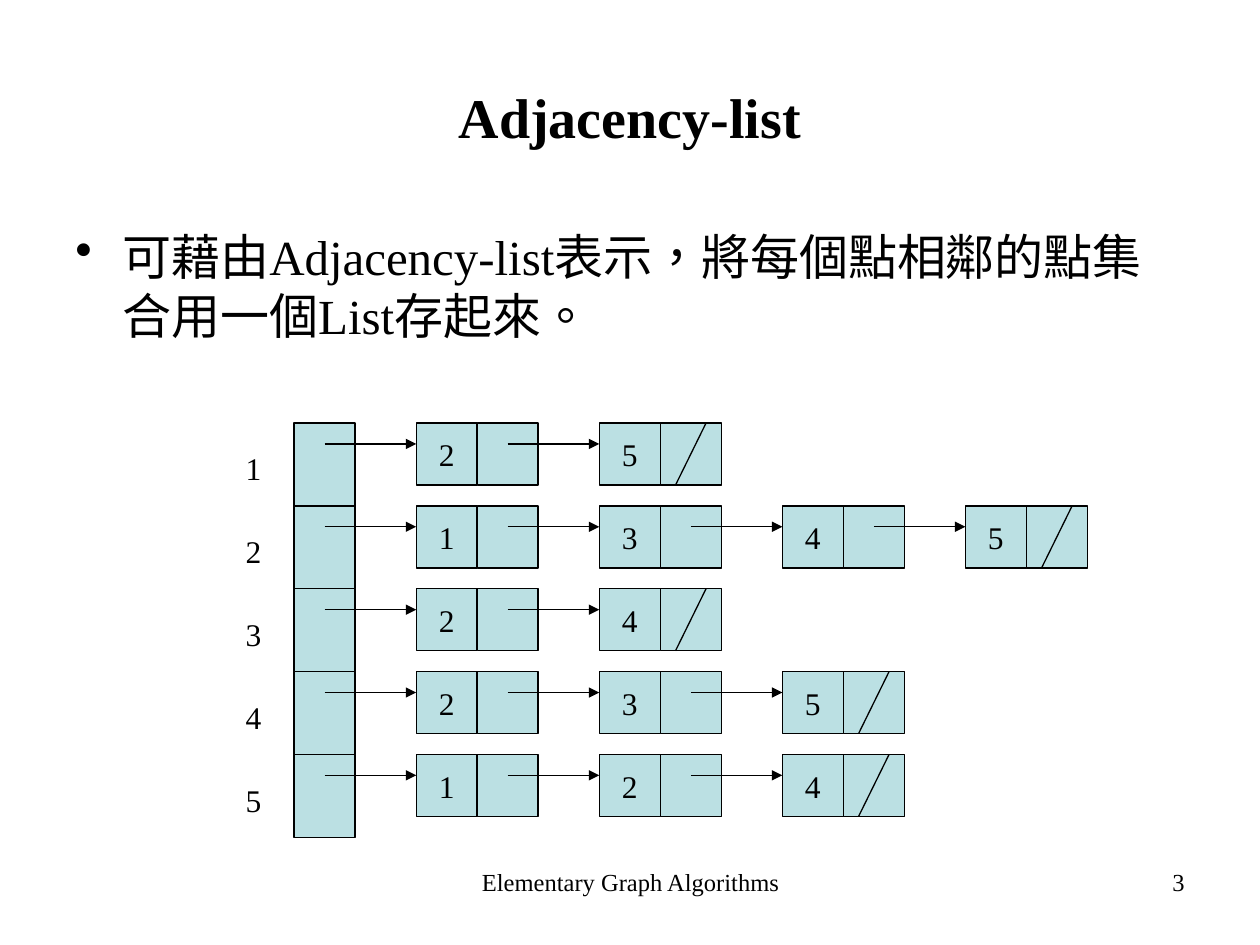
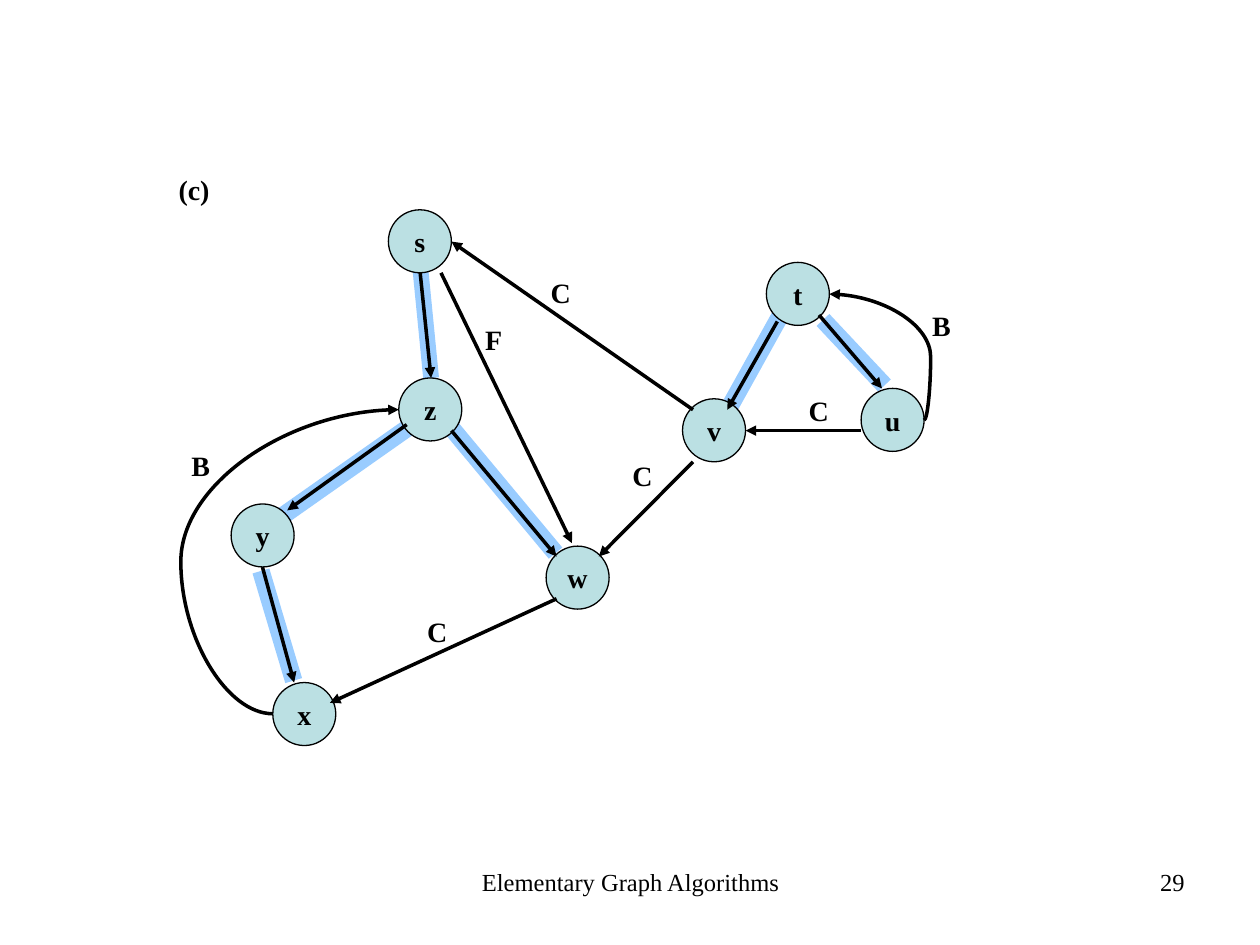
from lxml import etree
from pptx import Presentation
from pptx.dml.color import RGBColor
from pptx.enum.shapes import MSO_CONNECTOR as Connector, MSO_SHAPE as Shape
from pptx.enum.text import MSO_ANCHOR as Anchor, PP_ALIGN as Align
from pptx.oxml.ns import qn
from pptx.util import Cm, Pt

BLACK = RGBColor(0x00, 0x00, 0x00)
PALE_TEAL = RGBColor(0xBB, 0xE0, 0xE3)
TREE_BLUE = RGBColor(0x99, 0xCC, 0xFF)
FONT = "Times New Roman"
TITLE_ONLY, BLANK = 5, 6


class Deck:
    """Holds the shared style and the current slide; lengths are in centimetres."""

    def __init__(self):
        self.presentation = Presentation()
        self.presentation.slide_width = Cm(25.4)
        self.presentation.slide_height = Cm(19.05)
        self.slide = None

    def new_slide(self, number, title=None):
        layout = self.presentation.slide_layouts[TITLE_ONLY if title else BLANK]
        self.slide = self.presentation.slides.add_slide(layout)
        self.text("Elementary Graph Algorithms", 8.69, 17.35, 8.05, 1.32,
                  size=14, align=Align.CENTER)
        self.text(str(number), 18.21, 17.35, 5.92, 1.32, size=14, align=Align.RIGHT)
        if title:
            self.title(title)

    def title(self, text):
        shape = self.slide.shapes.title
        shape.left, shape.top = Cm(1.27), Cm(0.76)
        shape.width, shape.height = Cm(22.86), Cm(3.18)
        shape.text_frame.vertical_anchor = Anchor.MIDDLE
        self.style_text(shape, text, 32, True, Align.CENTER)

    def style_text(self, shape, text, size, bold=False, align=Align.LEFT):
        """Set the shape's text in the shared font and return its paragraph."""
        shape.text_frame.text = text
        paragraph = shape.text_frame.paragraphs[0]
        paragraph.alignment = align
        for run in paragraph.runs:
            run.font.name = FONT
            run.font.size = Pt(size)
            run.font.bold = bold
            run.font.color.rgb = BLACK
        return paragraph

    def text(self, text, left, top, width, height, size, bold=False,
             align=Align.LEFT, wrap=True):
        shape = self.slide.shapes.add_textbox(Cm(left), Cm(top), Cm(width), Cm(height))
        shape.text_frame.word_wrap = wrap
        return self.style_text(shape, text, size, bold, align)

    def bullet(self, text, left, top, width, height, size):
        paragraph = self.text(text, left, top, width, height, size)
        for run in paragraph.runs:
            run._r.get_or_add_rPr().set("lang", "zh-TW")
        properties = paragraph._p.get_or_add_pPr()
        properties.set("marL", str(Cm(0.95)))
        properties.set("indent", str(Cm(-0.95)))
        etree.SubElement(properties, qn("a:buChar")).set("char", "•")

    def box(self, kind, left, top, width, height, text="", size=18, bold=False):
        shape = self.slide.shapes.add_shape(kind, Cm(left), Cm(top), Cm(width), Cm(height))
        shape.shadow.inherit = False
        shape.fill.solid()
        shape.fill.fore_color.rgb = PALE_TEAL
        shape.line.color.rgb = BLACK
        shape.line.width = Pt(0.75)
        if text:
            shape.text_frame.word_wrap = False
            shape.text_frame.vertical_anchor = Anchor.MIDDLE
            self.style_text(shape, text, size, bold, Align.CENTER)

    def line(self, start, end, width=0.75, color=BLACK, arrow=False,
             kind=Connector.STRAIGHT):
        points = [Cm(value) for value in (*start, *end)]
        connector = self.slide.shapes.add_connector(kind, *points)
        connector.line.color.rgb = color
        connector.line.width = Pt(width)
        properties = connector._element.spPr
        if arrow:
            tail = etree.SubElement(properties.find(qn("a:ln")), qn("a:tailEnd"))
            tail.set("type", "triangle")
        etree.SubElement(properties, qn("a:effectLst"))
        return connector

    def curved_arrow(self, start, end, width, bend):
        """Draw an arrow whose middle lies at the fraction bend of its width."""
        connector = self.line(start, end, width, arrow=True, kind=Connector.CURVE)
        geometry = connector._element.spPr.find(qn("a:prstGeom"))
        guides = geometry.find(qn("a:avLst"))
        if guides is None:
            guides = etree.SubElement(geometry, qn("a:avLst"))
        guide = etree.SubElement(guides, qn("a:gd"))
        guide.set("name", "adj1")
        guide.set("fmla", f"val {round(bend * 100000)}")


ADJACENCY = {1: "25", 2: "1345", 3: "24", 4: "235", 5: "124"}
HEAD_LEFT, LIST_TOP = 5.93, 8.53
CELL, CELL_HEIGHT, ROW = 1.23, 1.25, 1.67
ARROW_DROP = 0.42


def adjacency_list_slide(deck):
    deck.new_slide(3, "Adjacency-list")
    deck.bullet("可藉由Adjacency-list表示，將每個點相鄰的點集合用一個List存起來。",
                1.27, 4.45, 22.86, 3.5, 28)
    for row, (vertex, neighbours) in enumerate(ADJACENCY.items()):
        top = LIST_TOP + row * ROW
        deck.text(str(vertex), 4.7, top + 0.4, 1.55, 1.02, 18)
        deck.box(Shape.RECTANGLE, HEAD_LEFT, top, CELL, ROW)
        lefts = [HEAD_LEFT + CELL * (2 + 3 * index) for index in range(len(neighbours))]
        for left, neighbour in zip(lefts, neighbours):
            deck.box(Shape.RECTANGLE, left, top, CELL, CELL_HEIGHT, neighbour)
            deck.box(Shape.RECTANGLE, left + CELL, top, CELL, CELL_HEIGHT)
        for left in lefts:
            deck.line((left - 1.5 * CELL, top + ARROW_DROP), (left, top + ARROW_DROP),
                      arrow=True)
        last = lefts[-1] + CELL
        deck.line((last + 0.75 * CELL, top), (last + 0.25 * CELL, top + CELL_HEIGHT))


DIAMETER = 1.27
VERTICES = {
    "s": (7.83, 4.23), "z": (8.04, 7.62), "y": (4.66, 10.16), "x": (5.5, 13.76),
    "w": (11.01, 11.01), "v": (13.76, 8.04), "u": (17.36, 7.83), "t": (15.45, 5.29),
}
TREE_BANDS = [
    ((16.59, 6.45), (17.83, 7.77), 10),
    ((15.72, 6.38), (14.71, 8.2), 10),
    ((9.07, 8.59), (11.2, 11.15), 10),
    ((5.26, 11.51), (5.92, 13.72), 10),
    ((8.2, 8.64), (5.64, 10.44), 10),
    ((8.46, 5.28), (8.69, 7.62), 9),
]
EDGES = [
    ((8.47, 5.5), (8.69, 7.62)),
    ((8.2, 8.56), (5.79, 10.29)),
    ((5.29, 11.43), (5.93, 13.76)),
    ((11.22, 12.07), (6.65, 14.17)),
    ((13.97, 9.31), (12.07, 11.22)),
    ((8.89, 5.5), (11.53, 10.95)),
    ((9.1, 8.68), (11.22, 11.22)),
    ((13.97, 8.26), (9.1, 4.87)),
    ((15.67, 6.48), (14.66, 8.26)),
    ((17.36, 8.68), (15.03, 8.68)),
    ((16.51, 6.35), (17.78, 7.83)),
]
BACK_EDGES = [
    ((5.5, 14.39), (8.04, 8.26), -0.73),
    ((18.63, 8.47), (16.72, 5.93), -0.07),
]
EDGE_LABELS = [
    ("B", 18.54, 6.1), ("B", 3.61, 8.92), ("C", 16.05, 7.8), ("C", 12.5, 9.12),
    ("C", 10.85, 5.44), ("C", 8.36, 12.27), ("F", 9.53, 6.38),
]


def edge_types_slide(deck):
    deck.new_slide(29)
    for start, end, width in TREE_BANDS:
        deck.line(start, end, width, TREE_BLUE)
    deck.text("(c)", 3.35, 3.35, 1.14, 0.94, 16, bold=True, wrap=False)
    for name, (left, top) in VERTICES.items():
        deck.box(Shape.OVAL, left, top, DIAMETER, DIAMETER, name, 16, bold=True)
    for start, end in EDGES:
        deck.line(start, end, 2, arrow=True)
    for start, end, bend in BACK_EDGES:
        deck.curved_arrow(start, end, 2, bend)
    for label, left, top in EDGE_LABELS:
        deck.text(label, left, top, 0.9, 0.94, 16, bold=True, wrap=False)


def main():
    deck = Deck()
    adjacency_list_slide(deck)
    edge_types_slide(deck)
    deck.presentation.save("out.pptx")


if __name__ == "__main__":
    main()
